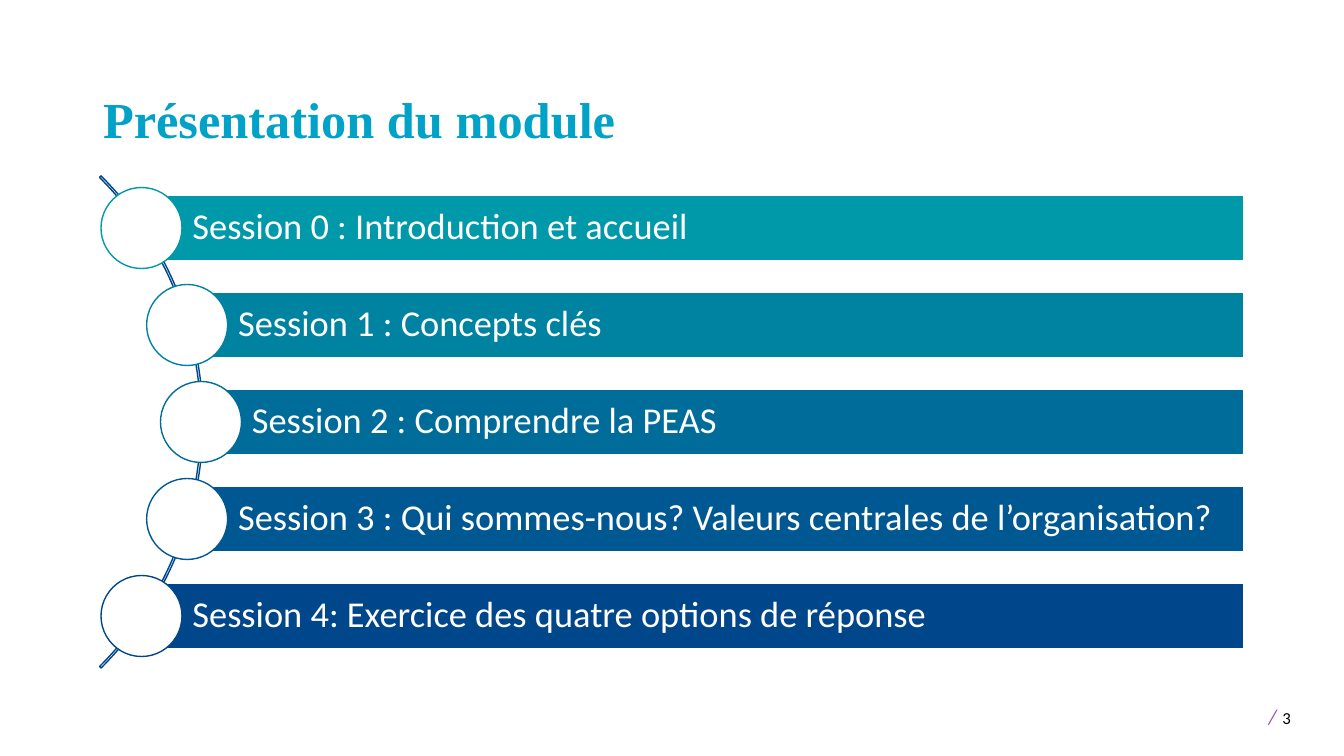
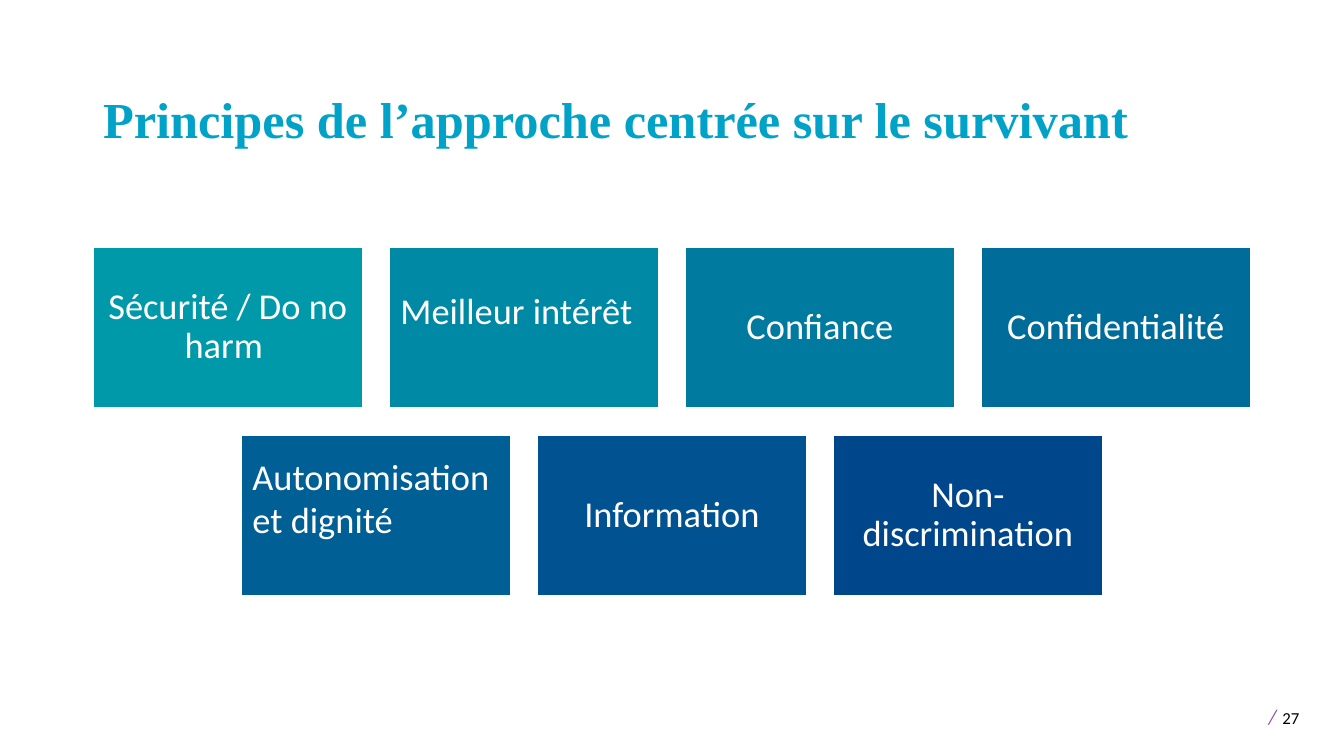
from dataclasses import dataclass
from math import sqrt

from pptx import Presentation
from pptx.dml.color import RGBColor
from pptx.enum.shapes import MSO_SHAPE
from pptx.enum.text import MSO_ANCHOR, PP_ALIGN
from pptx.util import Emu, Pt

# Content
SESSIONS = {
    "title": "Présentation du module",
    "number": "3",
    "items": [
        ("Session 0 : Introduction et accueil", "0099A9"),
        ("Session 1 : Concepts clés", "0082A1"),
        ("Session 2 : Comprendre la PEAS", "006C9A"),
        ("Session 3 : Qui sommes-nous? Valeurs centrales de l’organisation?", "005892"),
        ("Session 4: Exercice des quatre options de réponse", "00468B"),
    ],
}
# Each principle: text, fill, raised and left-aligned
PRINCIPLES = {
    "title": "Principes de l’approche centrée sur le survivant",
    "number": "27",
    "rows": [
        [
            ("Sécurité / Do no harm ", "0099A9", False),
            ("Meilleur intérêt", "0089A4", True),
            ("Confiance", "007B9F", False),
            ("Confidentialité", "006C9A", False),
        ],
        [
            ("Autonomisation et dignité", "005F95", True),
            ("Information", "005290", False),
            ("Non-discrimination", "00468B", False),
        ],
    ],
}


@dataclass(frozen=True)
class Theme:
    title_font: str = "Times New Roman"
    body_font: str = "Calibri"
    title_color: str = "00A2C7"
    arc_color: str = "00468B"
    slash_color: str = "9053A1"
    white: str = "FFFFFF"
    black: str = "000000"
    title_size: int = 36
    body_size: int = 26
    space_size: int = 18
    slash_size: int = 15
    number_size: int = 12
    line_width: int = 1
    tight: float = 0.9


THEME = Theme()
SLIDE_WIDTH, SLIDE_HEIGHT = 1344, 756
EMU_PER_PX = 12192000 / SLIDE_WIDTH


def px(length):
    return Emu(round(length * EMU_PER_PX))


def box(left, top, width, height):
    return [px(length) for length in (left, top, width, height)]


def add_run(paragraph, text, size, color, font=THEME.body_font, bold=False, italic=False):
    run = paragraph.add_run()
    run.text = text
    run.font.name = font
    run.font.size = Pt(size)
    run.font.bold = bold
    run.font.italic = italic
    run.font.color.rgb = RGBColor.from_string(color)


def add_shape(slide, preset, place, fill, line):
    shape = slide.shapes.add_shape(preset, *box(*place))
    shape.shadow.inherit = False
    if fill:
        shape.fill.solid()
        shape.fill.fore_color.rgb = RGBColor.from_string(fill)
    else:
        shape.fill.background()
    shape.line.color.rgb = RGBColor.from_string(line)
    shape.line.width = Pt(THEME.line_width)
    return shape


def add_panel(slide, place, fill, text, insets, align, spacing=THEME.tight):
    """Add a white-edged rectangle with vertically centred text."""
    frame = add_shape(slide, MSO_SHAPE.RECTANGLE, place, fill, THEME.white).text_frame
    frame.word_wrap = True
    frame.vertical_anchor = MSO_ANCHOR.MIDDLE
    (frame.margin_left, frame.margin_top,
     frame.margin_right, frame.margin_bottom) = box(*insets)
    paragraph = frame.paragraphs[0]
    paragraph.alignment = align
    paragraph.line_spacing = spacing
    add_run(paragraph, text, THEME.body_size, THEME.white)


def add_slide(presentation, content):
    """Add a slide with the shared title style and page number."""
    slide = presentation.slides.add_slide(presentation.slide_layouts[5])
    title = slide.shapes.title
    title.left, title.top, title.width, title.height = box(93, 40, 1159, 114)
    title.text_frame.word_wrap = True
    title.text_frame.vertical_anchor = MSO_ANCHOR.BOTTOM
    paragraph = title.text_frame.paragraphs[0]
    paragraph.alignment = PP_ALIGN.LEFT
    paragraph.line_spacing = THEME.tight
    add_run(paragraph, content["title"], THEME.title_size, THEME.title_color,
            THEME.title_font, bold=True)

    footer = slide.shapes.add_textbox(*box(1253, 694, 88, 40)).text_frame
    footer.word_wrap = True
    paragraph = footer.paragraphs[0]
    add_run(paragraph, " ", THEME.space_size, THEME.black)
    add_run(paragraph, "/", THEME.slash_size, THEME.slash_color, italic=True)
    add_run(paragraph, " ", THEME.space_size, THEME.black)
    add_run(paragraph, content["number"], THEME.number_size, THEME.black)
    return slide


def build_sessions(presentation):
    slide = add_slide(presentation, SESSIONS)
    center_x, center_y = -145, 422
    arc_radius, track_radius = 348, 346
    pitch, bar_height, bar_right, circle = 97, 65, 1244, 81

    # Curved spine
    arc = add_shape(slide, MSO_SHAPE.BLOCK_ARC,
                    (center_x - arc_radius, center_y - arc_radius,
                     2 * arc_radius, 2 * arc_radius), None, THEME.arc_color)
    for index, value in enumerate((189, 27, 0.0031)):
        arc.adjustments[index] = value

    # Bars start at the circle centres, which follow the spine
    middle = (len(SESSIONS["items"]) - 1) / 2
    for index, (text, color) in enumerate(SESSIONS["items"]):
        offset = (index - middle) * pitch
        x = center_x + sqrt(track_radius ** 2 - offset ** 2)
        y = center_y + offset
        add_panel(slide, (x, y - bar_height / 2, bar_right - x, bar_height),
                  color, text, (51, 7, 7, 7), PP_ALIGN.LEFT)
        add_shape(slide, MSO_SHAPE.OVAL,
                  (x - circle / 2, y - circle / 2, circle, circle), THEME.white, color)


def build_principles(presentation):
    slide = add_slide(presentation, PRINCIPLES)
    width, height, gap, top = 269, 161, 27, 247
    inset, raised_inset = 11, 47

    # Each row is centred on the slide
    for row_index, row in enumerate(PRINCIPLES["rows"]):
        row_width = len(row) * (width + gap) - gap
        left = (SLIDE_WIDTH - row_width) / 2
        for column, (text, color, raised) in enumerate(row):
            place = (left + column * (width + gap), top + row_index * (height + gap),
                     width, height)
            bottom = raised_inset if raised else inset
            add_panel(slide, place, color, text, (inset, inset, inset, bottom),
                      PP_ALIGN.LEFT if raised else PP_ALIGN.CENTER,
                      1.0 if raised else THEME.tight)


def main():
    presentation = Presentation()
    presentation.slide_width = px(SLIDE_WIDTH)
    presentation.slide_height = px(SLIDE_HEIGHT)
    build_sessions(presentation)
    build_principles(presentation)
    presentation.save("out.pptx")


if __name__ == "__main__":
    main()
